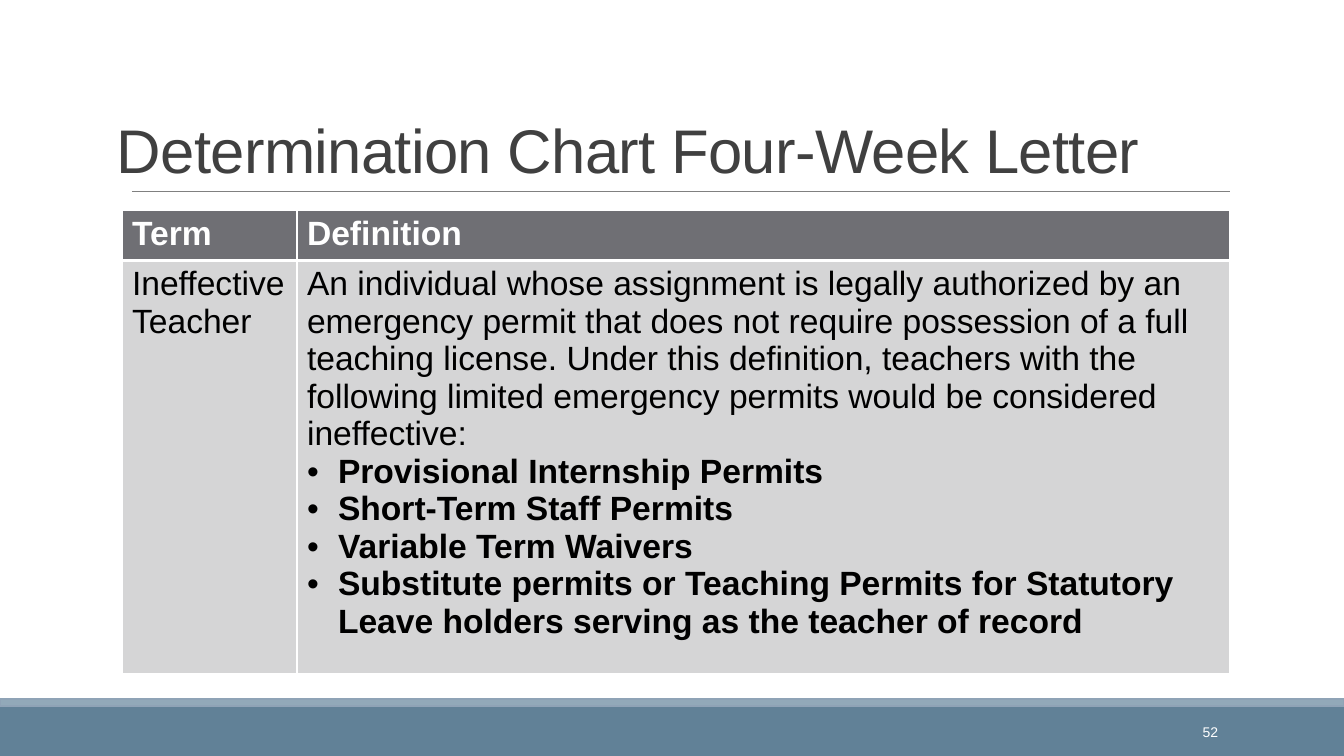
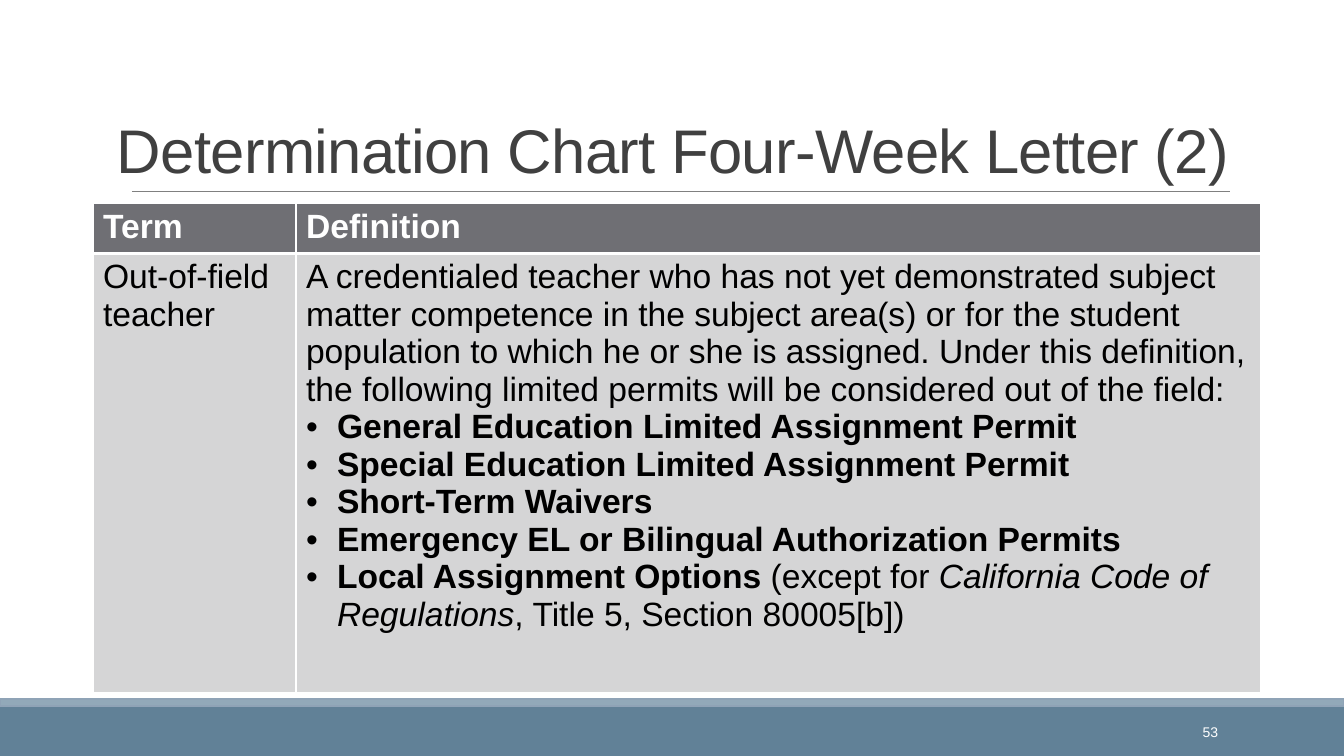
from dataclasses import dataclass

from lxml import etree
from pptx import Presentation
from pptx import util as u
from pptx.dml.color import RGBColor
from pptx.enum import shapes, text
from pptx.oxml import ns

# Shared geometry (px), colours and font
SLIDE_W, SLIDE_H = 1344, 756
EMU_PER_PX = 12192000 / SLIDE_W
BAND_TOP = 707
RULE_Y = 191
INDENT = 31
FONT = "Arial"

WHITE = RGBColor(0xFF, 0xFF, 0xFF)
BLACK = RGBColor(0x00, 0x00, 0x00)
TITLE_GREY = RGBColor(0x40, 0x40, 0x40)
RULE_GREY = RGBColor(0x80, 0x80, 0x80)
BAND_BLUE = RGBColor(0x61, 0x81, 0x97)
STRIPE_BLUE = RGBColor(0x92, 0xA9, 0xB9)
STRIPE_EDGE = RGBColor(0x8F, 0xA3, 0xB6)
HEAD_FILL = RGBColor(0x6F, 0x6F, 0x74)
BODY_FILL = RGBColor(0xD5, 0xD5, 0xD6)

TITLE_FMT = {"size": u.Pt(44), "color": TITLE_GREY}
NUMBER_FMT = {"size": u.Pt(10), "color": WHITE}
HEAD_FMT = {"size": u.Pt(24), "color": WHITE, "bold": True}
BODY_FMT = {"size": u.Pt(24), "color": BLACK, "bold": False}


@dataclass
class Run:
    text: str
    bold: bool = False
    italic: bool = False


@dataclass
class Para:
    runs: list[Run]
    bullet: bool = False


@dataclass
class Chart:
    title: str
    number: int
    term: str
    definition: list[Para]
    left: int
    top: int
    cols: tuple[int, int]
    rows: tuple[int, int]


def px(n: int) -> int:
    return round(n * EMU_PER_PX)


def plain(s: str) -> Para:
    return Para([Run(s)])


def bullet(s: str, *more: Run) -> Para:
    return Para([Run(s, bold=True), *more], bullet=True)


CHARTS = [
    Chart(
        "Determination Chart Four-Week Letter", 52, "Ineffective Teacher",
        [
            plain("An individual whose assignment is legally authorized by an "
                  "emergency permit that does not require possession of a full "
                  "teaching license. Under this definition, teachers with the "
                  "following limited emergency permits would be considered "
                  "ineffective:"),
            bullet("Provisional Internship Permits"),
            bullet("Short-Term Staff Permits"),
            bullet("Variable Term Waivers"),
            bullet("Substitute permits or Teaching Permits for Statutory Leave "
                   "holders serving as the teacher of record"),
        ],
        left=122, top=210, cols=(175, 933), rows=(47, 384),
    ),
    Chart(
        "Determination Chart Four-Week Letter (2)", 53, "Out-of-field teacher",
        [
            plain("A credentialed teacher who has not yet demonstrated subject "
                  "matter competence in the subject area(s) or for the student "
                  "population to which he or she is assigned. Under this "
                  "definition, the following limited permits will be considered "
                  "out of the field:"),
            bullet("General Education Limited Assignment Permit"),
            bullet("Special Education Limited Assignment Permit"),
            bullet("Short-Term Waivers"),
            bullet("Emergency EL or Bilingual Authorization Permits"),
            bullet("Local Assignment Options", Run(" (except for "),
                   Run("California Code of Regulations", italic=True),
                   Run(", Title 5, Section 80005[b])")),
        ],
        left=93, top=203, cols=(203, 965), rows=(48, 439),
    ),
]


# Text helpers
def set_font(font, fmt: dict) -> None:
    font.name = FONT
    for name, value in fmt.items():
        if name == "color":
            font.color.rgb = value
        else:
            setattr(font, name, value)


def add_bullet(p) -> None:
    pPr = p._p.get_or_add_pPr()
    pPr.set("marL", str(px(INDENT)))
    pPr.set("indent", str(-px(INDENT)))
    etree.SubElement(pPr, ns.qn("a:buFont")).set("typeface", FONT)
    etree.SubElement(pPr, ns.qn("a:buChar")).set("char", "•")


def fill_text(tf, paras: list[Para], fmt: dict) -> None:
    for i, para in enumerate(paras):
        p = tf.add_paragraph() if i else tf.paragraphs[0]
        if para.bullet:
            add_bullet(p)
        for run in para.runs:
            r = p.add_run()
            r.text = run.text
            set_font(r.font, {"bold": run.bold, "italic": run.italic} | fmt
                     if fmt is not BODY_FMT
                     else fmt | {"bold": run.bold, "italic": run.italic})


def add_text(s, box: tuple[int, int, int, int], words: str, fmt: dict, anchor):
    tf = s.shapes.add_textbox(*map(px, box)).text_frame
    tf.word_wrap = True
    tf.vertical_anchor = anchor
    fill_text(tf, [plain(words)], fmt)
    return tf.paragraphs[0]


# Shared slide parts
def add_band(s, top: int, height: int, fill: RGBColor, edge: RGBColor | None = None) -> None:
    sp = s.shapes.add_shape(shapes.MSO_SHAPE.RECTANGLE, 0, px(top), px(SLIDE_W), px(height))
    sp.shadow.inherit = False
    sp.fill.solid()
    sp.fill.fore_color.rgb = fill
    if edge is None:
        sp.line.fill.background()
    else:
        sp.line.color.rgb = edge
        sp.line.width = u.Pt(1.25)


def add_frame(s, chart: Chart) -> None:
    add_band(s, BAND_TOP, SLIDE_H - BAND_TOP, BAND_BLUE)
    add_band(s, BAND_TOP - 8, 7, STRIPE_BLUE, STRIPE_EDGE)

    rule = s.shapes.add_connector(shapes.MSO_CONNECTOR.STRAIGHT,
                                  px(132), px(RULE_Y), px(1230), px(RULE_Y))
    rule.line.color.rgb = RULE_GREY
    rule.line.width = u.Pt(0.5)
    etree.SubElement(rule._element.spPr, ns.qn("a:effectLst"))

    p = add_text(s, (107, 31, 1139, 160), chart.title, TITLE_FMT, text.MSO_ANCHOR.BOTTOM)
    p.line_spacing = 0.85
    p.runs[0]._r.get_or_add_rPr().set("spc", "-50")

    p = add_text(s, (1083, 712, 145, 40), str(chart.number), NUMBER_FMT,
                 text.MSO_ANCHOR.MIDDLE)
    p.alignment = text.PP_ALIGN.RIGHT


# Table
def set_borders(cell, widths: dict[str, int]) -> None:
    tcPr = cell._tc.get_or_add_tcPr()
    for side in "LRTB":
        ln = etree.SubElement(tcPr, ns.qn(f"a:ln{side}"), w=str(u.Pt(widths.get(side, 1))))
        solid = etree.SubElement(ln, ns.qn("a:solidFill"))
        etree.SubElement(solid, ns.qn("a:srgbClr"), val=str(WHITE))


def add_chart_table(s, chart: Chart) -> None:
    table = s.shapes.add_table(2, 2, px(chart.left), px(chart.top),
                               px(sum(chart.cols)), px(sum(chart.rows))).table
    table.horz_banding = False
    for col, width in zip(table.columns, chart.cols):
        col.width = px(width)
    for row, height in zip(table.rows, chart.rows):
        row.height = px(height)

    bands = [
        ([[plain("Term")], [plain("Definition")]], HEAD_FMT, HEAD_FILL, {"B": 3}),
        ([[plain(chart.term)], chart.definition], BODY_FMT, BODY_FILL, {"T": 3}),
    ]
    for row, (contents, fmt, fill, widths) in zip(table.rows, bands):
        for cell, paras in zip(row.cells, contents):
            set_borders(cell, widths)
            cell.fill.solid()
            cell.fill.fore_color.rgb = fill
            fill_text(cell.text_frame, paras, fmt)


def main() -> None:
    prs = Presentation()
    prs.slide_width, prs.slide_height = px(SLIDE_W), px(SLIDE_H)
    for chart in CHARTS:
        s = prs.slides.add_slide(prs.slide_layouts[6])
        add_frame(s, chart)
        add_chart_table(s, chart)
    prs.save("out.pptx")


if __name__ == "__main__":
    main()
